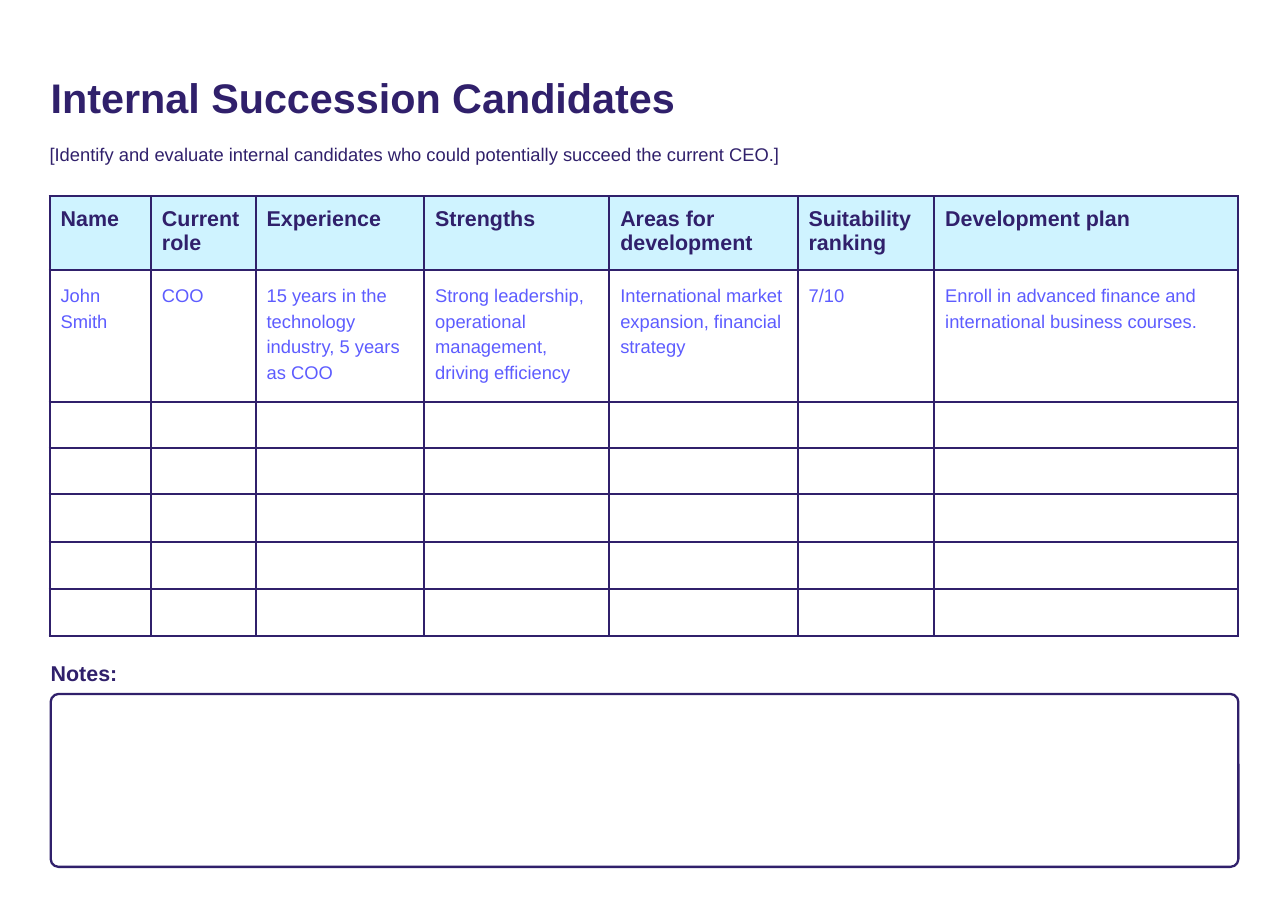
"""Build the internal succession candidates slide."""
import lxml.etree
import pptx
import pptx.dml.color
import pptx.enum.shapes
import pptx.enum.text
import pptx.oxml.ns
import pptx.util

Inches = pptx.util.Inches
Pt = pptx.util.Pt
qn = pptx.oxml.ns.qn

COLORS = {"ink": "30206B", "sample": "5D5CFF", "head": "CFF3FF", "paper": "FFFFFF"}
WIDTHS = [0.92, 0.95, 1.53, 1.68, 1.71, 1.24, 2.76]
HEIGHTS = [0.64, 1.13, 0.42, 0.42, 0.43, 0.43, 0.43]
HEADS = ["Name", "Current role", "Experience", "Strengths",
         "Areas for development", "Suitability\nranking", "Development plan"]
SAMPLE = ["John Smith", "COO",
          "15 years in the technology industry, 5 years as COO",
          "Strong leadership, operational management, driving efficiency",
          "International market expansion, financial strategy", "7/10",
          "Enroll in advanced finance and international business courses."]


def color(name):
    return pptx.dml.color.RGBColor.from_string(COLORS[name])


def write(frame, text, size, bold=False, tint="ink", lead=1.0):
    frame.text = text
    frame.word_wrap = True
    for para in frame.paragraphs:
        para.alignment = pptx.enum.text.PP_ALIGN.LEFT
        para.line_spacing = lead
        para.space_before = Pt(0)
        for run in para.runs:
            run.font.name = "Arial"
            run.font.size = Pt(size)
            run.font.bold = bold
            run.font.color.rgb = color(tint)


def pad(item, gap):
    item.margin_left = item.margin_right = Inches(gap)
    item.margin_top = item.margin_bottom = Inches(gap)


def add_title(slide, text):
    title = slide.shapes.title
    title.left, title.top = Inches(0.46), Inches(0.57)
    title.width, title.height = Inches(9.1), Inches(0.55)
    frame = title.text_frame
    write(frame, text, 27, True, lead=1.15)
    pad(frame, 0)
    frame.auto_size = pptx.enum.text.MSO_AUTO_SIZE.NONE
    frame.vertical_anchor = pptx.enum.text.MSO_ANCHOR.MIDDLE


def add_label(slide, text, box, size, bold, lead):
    frame = slide.shapes.add_textbox(*map(Inches, box)).text_frame
    pad(frame, 0)
    write(frame, text, size, bold, lead=lead)


def add_panel(slide, box):
    kind = pptx.enum.shapes.MSO_SHAPE.ROUNDED_RECTANGLE
    panel = slide.shapes.add_shape(kind, *map(Inches, box))
    panel.adjustments[0] = 0.046
    panel.shadow.inherit = False
    panel.fill.solid()
    panel.fill.fore_color.rgb = color("paper")
    panel.line.color.rgb = color("ink")
    panel.line.width = Pt(1.5)


def set_edges(cell):
    props = cell._tc.get_or_add_tcPr()
    for spot, side in enumerate(("lnL", "lnR", "lnT", "lnB")):
        edge = lxml.etree.Element(qn("a:" + side), w=str(Pt(1.5)))
        fill = lxml.etree.SubElement(edge, qn("a:solidFill"))
        lxml.etree.SubElement(fill, qn("a:srgbClr"), val=COLORS["ink"])
        props.insert(spot, edge)


def add_grid(slide, left, top):
    grid = slide.shapes.add_table(
        len(HEIGHTS), len(WIDTHS), Inches(left), Inches(top),
        Inches(sum(WIDTHS)), Inches(sum(HEIGHTS))).table
    for col, width in zip(grid.columns, WIDTHS):
        col.width = Inches(width)
    for row, height in zip(grid.rows, HEIGHTS):
        row.height = Inches(height)
        for cell in row.cells:
            cell.fill.background()
            set_edges(cell)
    for cell, text in zip(grid.rows[0].cells, HEADS):
        cell.fill.solid()
        cell.fill.fore_color.rgb = color("head")
        pad(cell, 0.1)
        write(cell.text_frame, text, 14, True)
    for cell, text in zip(grid.rows[1].cells, SAMPLE):
        pad(cell, 0.1)
        write(cell.text_frame, text, 12, tint="sample", lead=1.25)


def main():
    deck = pptx.Presentation()
    deck.slide_width, deck.slide_height = Inches(11.69), Inches(8.27)
    slide = deck.slides.add_slide(deck.slide_layouts[5])
    add_title(slide, "Internal Succession Candidates")
    add_panel(slide, (0.46, 6.3, 10.78, 1.57))
    add_label(slide, "Notes:", (0.46, 5.96, 1.66, 0.24), 14, True, 1.14)
    add_label(slide, "[Identify and evaluate internal candidates who could "
              "potentially succeed the current CEO.]",
              (0.45, 1.25, 10.78, 0.28), 12, False, 1.25)
    add_grid(slide, 0.45, 1.78)
    deck.save("out.pptx")


if __name__ == "__main__":
    main()
